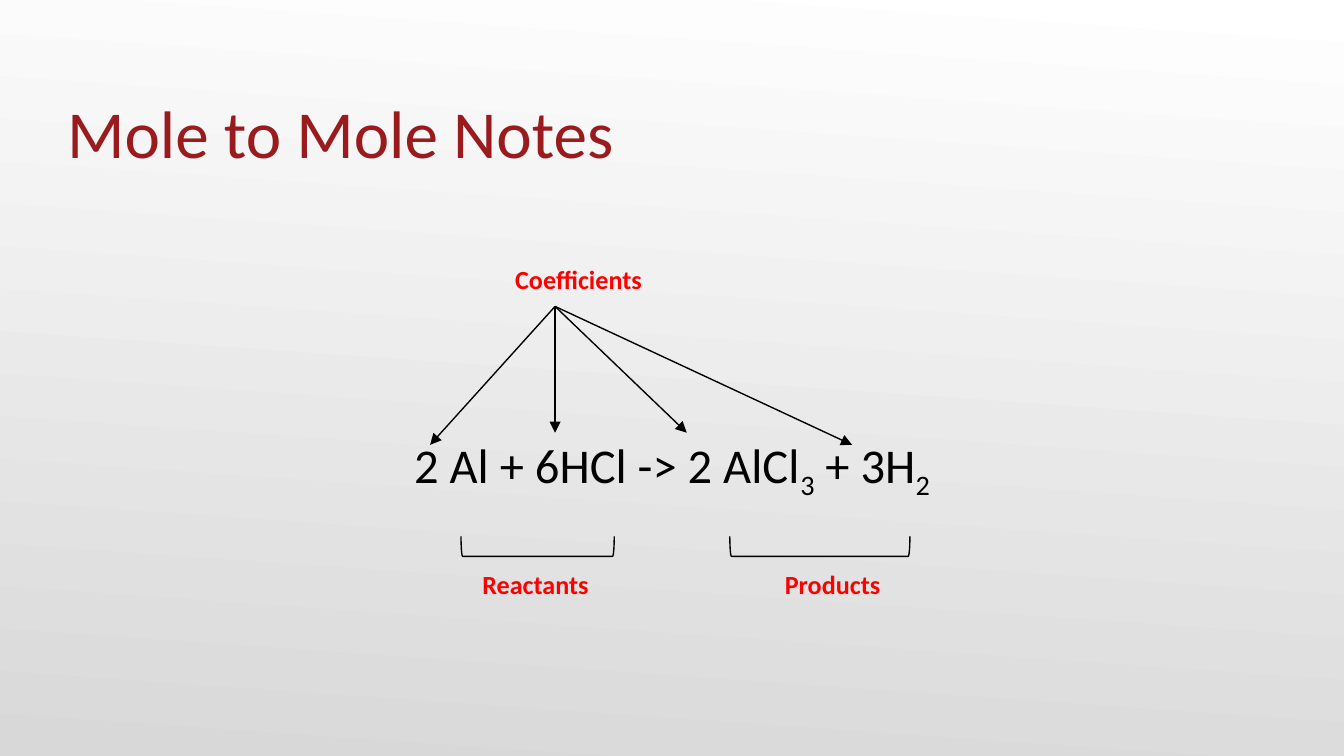
from pptx import Presentation
from pptx.dml.color import RGBColor
from pptx.enum.shapes import MSO_CONNECTOR, MSO_SHAPE
from pptx.enum.text import MSO_ANCHOR, PP_ALIGN
from pptx.oxml.ns import qn
from pptx.util import Inches, Pt
from lxml.etree import SubElement

THEME = {
    "font": "Calibri",
    "title": (36, "991B1E", False),
    "label": (14, "FF0000", True),
    "equation": (26, "000000", False),
    "line": ("000000", 0.75),
    "background": ("FFFFFF", "D8D8D8"),
}

TITLE = "Mole to Mole Notes"
EQUATION = [("2 Al + 6HCl -> 2 AlCl", False), ("3", True), (" + 3H", False), ("2", True)]
LABELS = [("Coefficients", 3.63, 1.86), ("Reactants", 3.31, 4.13), ("Products", 5.52, 4.13)]
ARROW_START = (4.13, 2.28)
ARROW_TIPS = [(3.2, 3.31), (4.13, 3.22), (5.11, 3.22), (6.34, 3.31)]
BRACKETS = [(3.43, 1.14), (5.43, 1.34)]  # left edge, span
BRACKET_TOP, BRACKET_DEPTH = 3.99, 0.15


def color(value):
    return RGBColor.from_string(value)


def add_text(s, runs, box, style, insets, align=PP_ALIGN.CENTER, anchor=MSO_ANCHOR.TOP):
    """Add one paragraph; runs are (text, is_subscript) pairs."""
    tf = s.shapes.add_textbox(*map(Inches, box)).text_frame
    tf.word_wrap = True
    tf.vertical_anchor = anchor
    tf.margin_left, tf.margin_top, tf.margin_right, tf.margin_bottom = map(Inches, insets)
    p = tf.paragraphs[0]
    p.alignment = align
    size, rgb, bold = THEME[style]
    p.font.name, p.font.size, p.font.bold = THEME["font"], Pt(size), bold
    p.font.color.rgb = color(rgb)
    for text, subscript in runs:
        r = p.add_run()
        r.text = text
        if subscript:
            r.font._element.set("baseline", "-25000")


def style_line(sp):
    rgb, width = THEME["line"]
    sp.line.color.rgb = color(rgb)
    sp.line.width = Pt(width)


def add_arrow(s, start, end):
    arrow = s.shapes.add_connector(MSO_CONNECTOR.STRAIGHT, *map(Inches, start + end))
    style_line(arrow)
    SubElement(arrow.line._get_or_add_ln(), qn("a:tailEnd"), type="triangle")
    SubElement(arrow._element.spPr, qn("a:effectLst"))


def add_bracket(s, left, span):
    """Add a bracket opening upwards: a right bracket turned about its centre."""
    x = left + (span - BRACKET_DEPTH) / 2
    y = BRACKET_TOP - (span - BRACKET_DEPTH) / 2
    sp = s.shapes.add_shape(MSO_SHAPE.RIGHT_BRACKET, *map(Inches, (x, y, BRACKET_DEPTH, span)))
    sp.rotation = 90
    sp.shadow.inherit = False
    sp.fill.background()
    style_line(sp)


def main():
    prs = Presentation()
    prs.slide_width = Inches(10)
    prs.slide_height = prs.slide_width * 9 // 16
    s = prs.slides.add_slide(prs.slide_layouts[6])

    fill = s.background.fill
    fill.gradient()
    fill.gradient_angle = 266
    for stop, position, rgb in zip(fill.gradient_stops, (0, 1), THEME["background"]):
        stop.position = position
        stop.color.rgb = color(rgb)

    add_text(s, [(TITLE, False)], (0.5, 0.34, 9, 0.94), "title", (0, 0.05, 0, 0),
             PP_ALIGN.LEFT, MSO_ANCHOR.BOTTOM)
    for text, left, top in LABELS:
        add_text(s, [(text, False)], (left, top, 1.35, 0.42), "label", (0.1,) * 4)
    add_text(s, EQUATION, (0.5, 3.19, 9, 0.55), "equation", (0.1, 0.05, 0.1, 0.05))
    for tip in ARROW_TIPS:
        add_arrow(s, ARROW_START, tip)
    for left, span in BRACKETS:
        add_bracket(s, left, span)

    prs.save("out.pptx")


if __name__ == "__main__":
    main()
